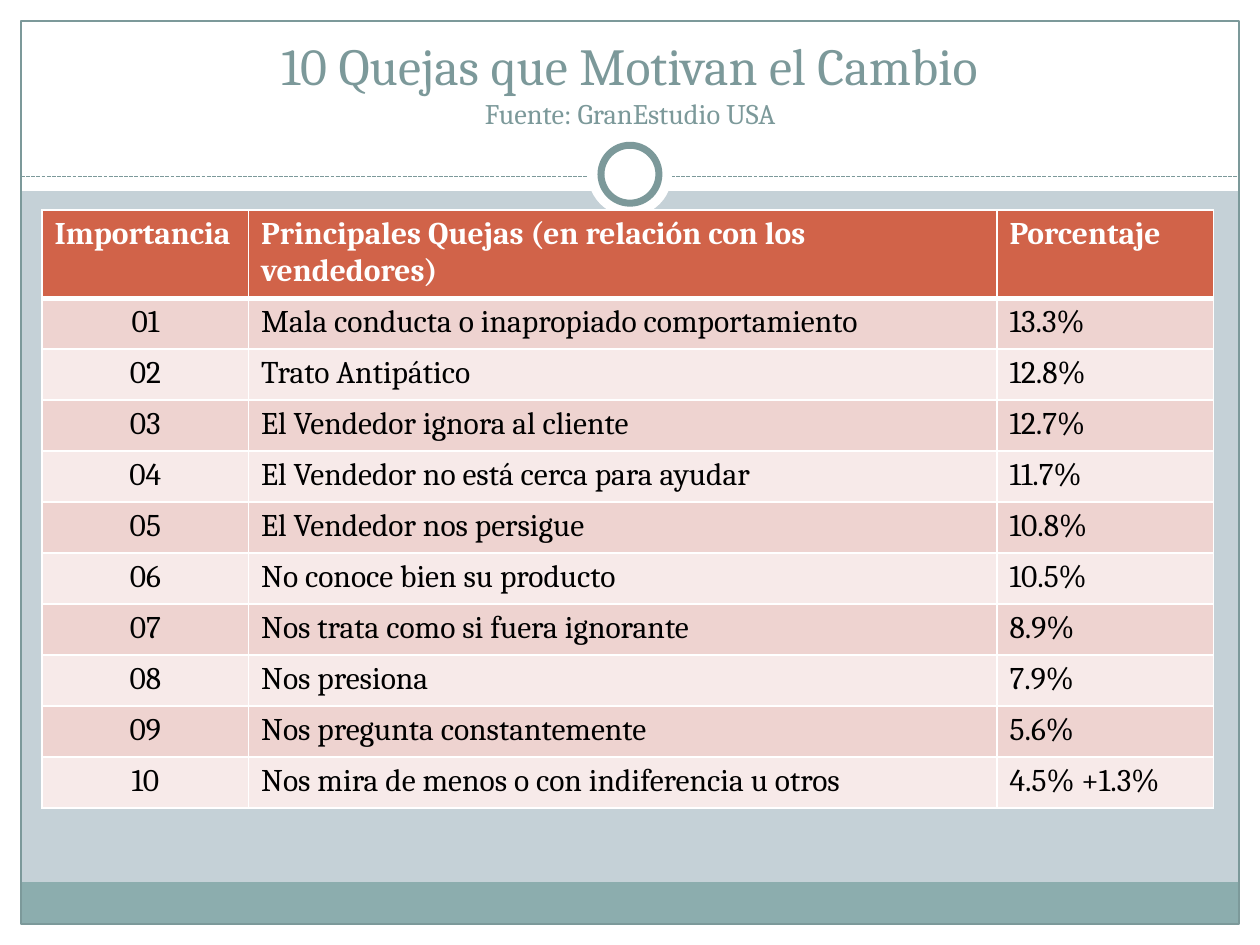
"""Build a slide ranking the ten complaints that make customers switch."""
from dataclasses import dataclass
from typing import NamedTuple, Optional

from lxml.etree import SubElement
from pptx import Presentation
from pptx.dml.color import RGBColor
from pptx.enum.dml import MSO_LINE_DASH_STYLE as DASH
from pptx.enum.shapes import MSO_CONNECTOR as CONN, MSO_SHAPE as SHAPE
from pptx.enum.text import MSO_ANCHOR as ANCHOR, PP_ALIGN as ALIGN
from pptx.oxml.ns import qn
from pptx.util import Inches, Pt


@dataclass(frozen=True)
class Theme:
    font: str = "Cambria"
    title: float = 29.7
    source: float = 16.2
    body: float = 18
    white: str = "FFFFFF"
    black: str = "000000"
    back: str = "C5D1D7"
    accent: str = "7C999A"
    footer: str = "8CADAE"
    header: str = "D16349"
    bands: tuple = ("EED3D0", "F7EAE9")
    thin: float = 0.75
    ring: float = 4
    border: float = 1
    header_border: float = 3


class Box(NamedTuple):
    col: float
    row: float
    cols: float
    rows: float


class Panel(NamedTuple):
    box: Box
    fill: Optional[str] = None
    line: Optional[float] = None
    kind: SHAPE = SHAPE.RECTANGLE


class Complaint(NamedTuple):
    text: str
    share: str


T = Theme()
COLS, ROWS = 60, 45
UNIT = Inches(10) / COLS
RULE_ROW = 8.4
CENTER = (COLS / 2, 8.3)
COLUMN_WIDTHS = (9.84, 35.64, 10.32)
HEADER_ROWS, BODY_ROWS = 4.04, 2.43
HEADINGS = ("Importancia", "Principales Quejas (en relación con los vendedores)", "Porcentaje")
COMPLAINTS = (
    Complaint("Mala conducta o inapropiado comportamiento", "13.3%"),
    Complaint("Trato Antipático", "12.8%"),
    Complaint("El Vendedor ignora al cliente", "12.7%"),
    Complaint("El Vendedor no está cerca para ayudar", "11.7%"),
    Complaint("El Vendedor nos persigue", "10.8%"),
    Complaint("No conoce bien su producto", "10.5%"),
    Complaint("Nos trata como si fuera ignorante", "8.9%"),
    Complaint("Nos presiona", "7.9%"),
    Complaint("Nos pregunta constantemente", "5.6%"),
    Complaint("Nos mira de menos o con indiferencia u otros", "4.5% +1.3%"),
)


def grid(n: float) -> int:
    return round(n * UNIT)


def place(box: Box) -> tuple:
    return tuple(grid(n) for n in box)


def rgb(color: str) -> RGBColor:
    return RGBColor.from_string(color)


def centered(size: float) -> Box:
    return Box(CENTER[0] - size / 2, CENTER[1] - size / 2, size, size)


PANELS = (
    Panel(Box(0, ROWS - 1, COLS, 1), T.white),
    Panel(Box(0, 0, COLS, 9.1), T.white),
    Panel(Box(0, 0, 1, ROWS), T.white),
    Panel(Box(COLS - 1, 0, 1, ROWS), T.white),
    Panel(Box(1, ROWS - 3, COLS - 2, 2), T.footer),
    Panel(Box(1, 1, COLS - 2, ROWS - 2), line=T.thin),
)
MEDALLION = (
    Panel(centered(4), T.white, kind=SHAPE.OVAL),
    Panel(centered(2.76), T.white, T.ring, SHAPE.OVAL),
)


def add_panel(s, panel: Panel) -> None:
    sp = s.shapes.add_shape(panel.kind, *place(panel.box))
    sp.shadow.inherit = False
    if panel.fill:
        sp.fill.solid()
        sp.fill.fore_color.rgb = rgb(panel.fill)
    else:
        sp.fill.background()
    if panel.line:
        sp.line.color.rgb = rgb(T.accent)
        sp.line.width = Pt(panel.line)
    else:
        sp.line.fill.background()


def add_rule(s) -> None:
    y = grid(RULE_ROW)
    rule = s.shapes.add_connector(CONN.STRAIGHT, grid(1), y, grid(COLS - 1), y)
    rule.line.color.rgb = rgb(T.accent)
    rule.line.width = Pt(T.thin)
    rule.line.dash_style = DASH.SQUARE_DOT
    SubElement(rule.line._get_or_add_ln().getparent(), qn("a:effectLst"))


def add_run(p, text: str, size: float, color: str, bold: bool = False) -> None:
    r = p.add_run()
    r.text = text
    r.font.name = T.font
    r.font.size = Pt(size)
    r.font.bold = bold
    r.font.color.rgb = rgb(color)


def add_title(s) -> None:
    tf = s.shapes.add_textbox(*place(Box(2, 1.5, COLS - 4, 5))).text_frame
    tf.word_wrap = True
    tf.vertical_anchor = ANCHOR.BOTTOM
    p = tf.paragraphs[0]
    p.alignment = ALIGN.CENTER
    add_run(p, "10 Quejas que Motivan el Cambio", T.title, T.accent)
    p.add_line_break()
    add_run(p, "Fuente: GranEstudio USA", T.source, T.accent)


def set_borders(cell, top: float, bottom: float) -> None:
    widths = {"L": T.border, "R": T.border, "T": top, "B": bottom}
    for side, width in widths.items():
        ln = SubElement(cell._tc.get_or_add_tcPr(), qn(f"a:ln{side}"), w=str(Pt(width)))
        SubElement(SubElement(ln, qn("a:solidFill")), qn("a:srgbClr"), val=T.white)


def fill_cell(cell, text: str, row: int, col: int) -> None:
    is_header = row == 0
    set_borders(cell, T.header_border if row == 1 else T.border,
                T.header_border if is_header else T.border)
    cell.fill.solid()
    cell.fill.fore_color.rgb = rgb(T.header if is_header else T.bands[(row - 1) % 2])
    p = cell.text_frame.paragraphs[0]
    p.alignment = ALIGN.CENTER if col == 0 and not is_header else ALIGN.LEFT
    add_run(p, text, T.body, T.white if is_header else T.black, is_header)


def add_ranking(s) -> None:
    rows = [HEADINGS] + [(f"{i:02}", *c) for i, c in enumerate(COMPLAINTS, 1)]
    box = Box(2, 10, sum(COLUMN_WIDTHS), HEADER_ROWS + BODY_ROWS * len(COMPLAINTS))
    table = s.shapes.add_table(len(rows), len(HEADINGS), *place(box)).table
    for column, width in zip(table.columns, COLUMN_WIDTHS):
        column.width = grid(width)
    for i, texts in enumerate(rows):
        table.rows[i].height = grid(BODY_ROWS if i else HEADER_ROWS)
        for j, text in enumerate(texts):
            fill_cell(table.cell(i, j), text, i, j)


def main() -> None:
    prs = Presentation()
    prs.slide_width, prs.slide_height = grid(COLS), grid(ROWS)
    s = prs.slides.add_slide(prs.slide_layouts[6])
    s.background.fill.solid()
    s.background.fill.fore_color.rgb = rgb(T.back)
    for panel in PANELS:
        add_panel(s, panel)
    add_rule(s)
    for panel in MEDALLION:
        add_panel(s, panel)
    add_title(s)
    add_ranking(s)
    prs.save("out.pptx")


if __name__ == "__main__":
    main()
